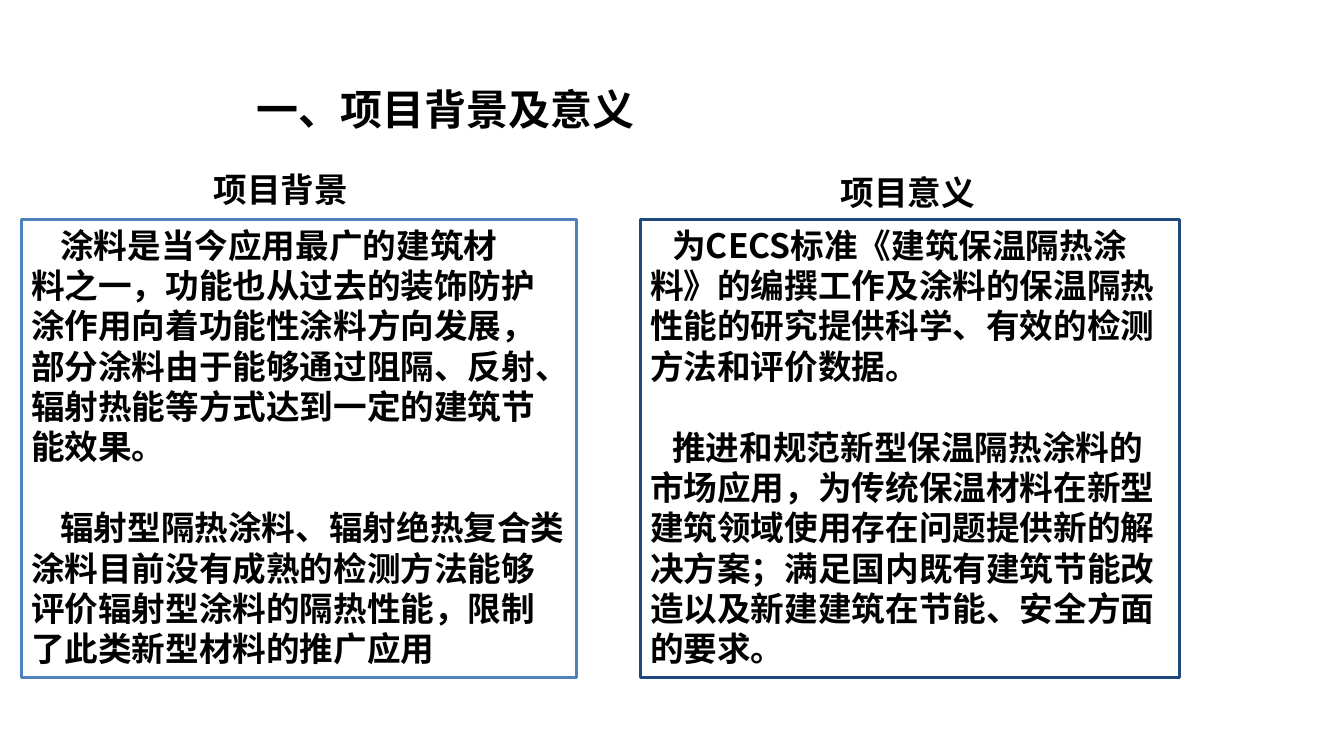
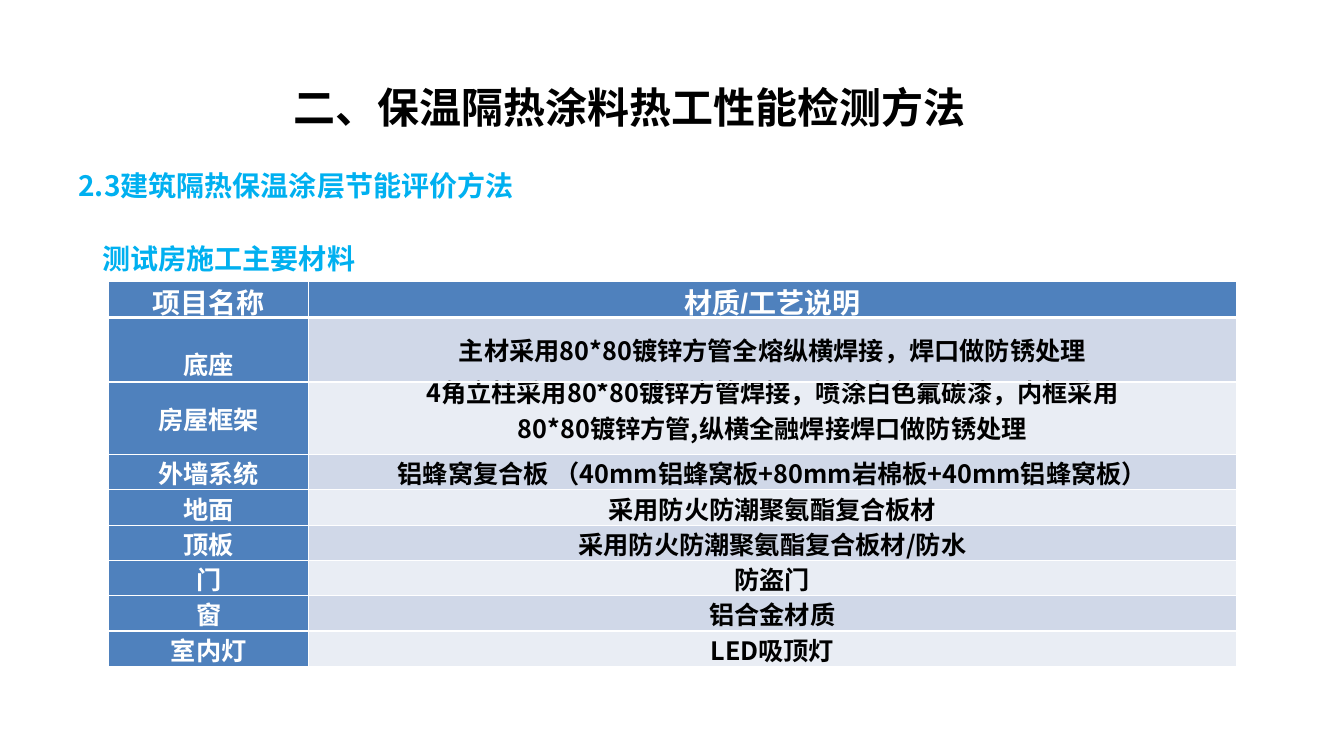
from lxml import etree
from pptx import Presentation
from pptx import util as u
from pptx.dml.color import RGBColor
from pptx.enum import shapes, text
from pptx.oxml import ns

PX = 9144
CJK = "Noto Sans CJK SC"
LATIN = "Arial"

BLACK = RGBColor(0x00, 0x00, 0x00)
WHITE = RGBColor(0xFF, 0xFF, 0xFF)
BLUE = RGBColor(0x4F, 0x81, 0xBD)
NAVY = RGBColor(0x1F, 0x49, 0x7D)
SKY = RGBColor(0x00, 0xB0, 0xF0)
BANDS = (RGBColor(0xD0, 0xD8, 0xE8), RGBColor(0xE9, 0xED, 0xF4))

BACKGROUND = (
    "涂料是当今应用最广的建筑材\v料之一，功能也从过去的装饰防护涂作用向着功能性涂料方向发展，"
    "部分涂料由于能够通过阻隔、反射、辐射热能等方式达到一定的建筑节能效果。",
    "辐射型隔热涂料、辐射绝热复合类涂料目前没有成熟的检测方法能够评价辐射型涂料的隔热性能，"
    "限制了此类新型材料的推广应用",
)
SIGNIFICANCE = (
    "为CECS标准《建筑保温隔热涂料》的编撰工作及涂料的保温隔热性能的研究提供科学、"
    "有效的检测方法和评价数据。",
    "推进和规范新型保温隔热涂料的市场应用，为传统保温材料在新型建筑领域使用存在问题提供新的解决方案；"
    "满足国内既有建筑节能改造以及新建建筑在节能、安全方面的要求。",
)
MATERIALS = (
    ("项目名称", "材质/工艺说明"),
    ("底座", "主材采用80*80镀锌方管全熔纵横焊接，焊口做防锈处理"),
    ("房屋框架", "4角立柱采用80*80镀锌方管焊接，喷涂白色氟碳漆，内框采用\n"
                 "80*80镀锌方管,纵横全融焊接焊口做防锈处理"),
    ("外墙系统", "铝蜂窝复合板 （40mm铝蜂窝板+80mm岩棉板+40mm铝蜂窝板）"),
    ("地面", "采用防火防潮聚氨酯复合板材"),
    ("顶板", "采用防火防潮聚氨酯复合板材/防水"),
    ("门", "防盗门"),
    ("窗", "铝合金材质"),
    ("室内灯", "LED吸顶灯"),
)
COLUMN_WIDTHS = (198, 920)
ROW_HEIGHTS = (36, 64, 72) + (35,) * 6
BASE_ROW, FRAME_ROW = 1, 2


def px(*lengths):
    return [u.Emu(length * PX) for length in lengths]


def style(paragraph, size, color, name=CJK):
    font = paragraph.font
    font.size = u.Pt(size)
    font.bold = True
    font.name = name
    font.color.rgb = color
    properties = paragraph._p.pPr.find(ns.qn("a:defRPr"))
    etree.SubElement(properties, ns.qn("a:ea")).set("typeface", CJK)


def add_label(slide, left, top, width, height, wording, size, color=BLACK):
    box = slide.shapes.add_textbox(*px(left, top, width, height))
    frame = box.text_frame
    frame.word_wrap = True
    frame.auto_size = text.MSO_AUTO_SIZE.SHAPE_TO_FIT_TEXT
    frame.text = wording
    style(frame.paragraphs[0], size, color)


def add_title(slide, left, top, wording):
    add_label(slide, left, top, 882, 61, wording, 30)


def add_panel(slide, left, width, line_color, indent, passages):
    panel = slide.shapes.add_shape(
        shapes.MSO_SHAPE.RECTANGLE, *px(left, 218, width, 454))
    panel.shadow.inherit = False
    panel.fill.solid()
    panel.fill.fore_color.rgb = WHITE
    panel.line.color.rgb = line_color
    panel.line.width = u.Pt(2)
    frame = panel.text_frame
    frame.word_wrap = True
    frame.vertical_anchor = text.MSO_ANCHOR.TOP
    frame.text = "\n".join(passages)
    for index, paragraph in enumerate(frame.paragraphs):
        paragraph.alignment = text.PP_ALIGN.LEFT
        paragraph._p.get_or_add_pPr().set("indent", str(indent * PX))
        if index:
            paragraph.space_before = u.Pt(29)
        style(paragraph, 24, BLACK)


def set_borders(cell, top, bottom):
    properties = cell._tc.get_or_add_tcPr()
    for side, points in (("L", 1), ("R", 1), ("T", top), ("B", bottom)):
        line = etree.SubElement(
            properties, ns.qn(f"a:ln{side}"), w=str(u.Pt(points)))
        fill = etree.SubElement(line, ns.qn("a:solidFill"))
        etree.SubElement(fill, ns.qn("a:srgbClr"), val=str(WHITE))


def fill_cell(cell, wording, row, column):
    is_header = row == 0
    is_blue = is_header or column == 0
    set_borders(cell, 3 if row == 1 else 1, 3 if is_header else 1)
    cell.fill.solid()
    cell.fill.fore_color.rgb = BLUE if is_blue else BANDS[(row - 1) % 2]
    cell.margin_left, cell.margin_right = px(7, 7)
    cell.margin_top = cell.margin_bottom = 0
    if row in (BASE_ROW, FRAME_ROW):
        cell.vertical_anchor = text.MSO_ANCHOR.MIDDLE
    cell.text = wording
    for paragraph in cell.text_frame.paragraphs:
        paragraph.alignment = text.PP_ALIGN.CENTER
        style(paragraph, 20 if is_header else 18,
              WHITE if is_blue else BLACK, LATIN if is_blue else CJK)


def add_materials_table(slide, left, top):
    frame = slide.shapes.add_table(
        len(MATERIALS), len(COLUMN_WIDTHS),
        *px(left, top, sum(COLUMN_WIDTHS), sum(ROW_HEIGHTS)))
    table = frame.table
    for column, width in zip(table.columns, px(*COLUMN_WIDTHS)):
        column.width = width
    for row, height in zip(table.rows, px(*ROW_HEIGHTS)):
        row.height = height
    for row, wordings in enumerate(MATERIALS):
        for column, wording in enumerate(wordings):
            fill_cell(table.cell(row, column), wording, row, column)
    table.cell(BASE_ROW, 0).vertical_anchor = text.MSO_ANCHOR.BOTTOM
    first_line = table.cell(FRAME_ROW, 1).text_frame.paragraphs[0]
    first_line.line_spacing = u.Pt(13.8)


def build_background_slide(slide):
    add_title(slide, 245, 78, "一、项目背景及意义")
    add_label(slide, 202, 163, 244, 50, "项目背景", 24)
    add_label(slide, 824, 166, 244, 50, "项目意义", 24)
    add_panel(slide, 21, 551, BLUE, 29, BACKGROUND)
    add_panel(slide, 635, 535, NAVY, 22, SIGNIFICANCE)


def build_materials_slide(slide):
    add_title(slide, 281, 76, "二、保温隔热涂料热工性能检测方法")
    add_label(slide, 68, 162, 667, 44, "2.3建筑隔热保温涂层节能评价方法", 20, SKY)
    add_label(slide, 92, 235, 667, 44, "测试房施工主要材料", 20, SKY)
    add_materials_table(slide, 108, 279)


def main():
    presentation = Presentation()
    presentation.slide_width, presentation.slide_height = px(1333, 750)
    blank = presentation.slide_layouts[6]
    for build in (build_background_slide, build_materials_slide):
        build(presentation.slides.add_slide(blank))
    presentation.save("out.pptx")


if __name__ == "__main__":
    main()
